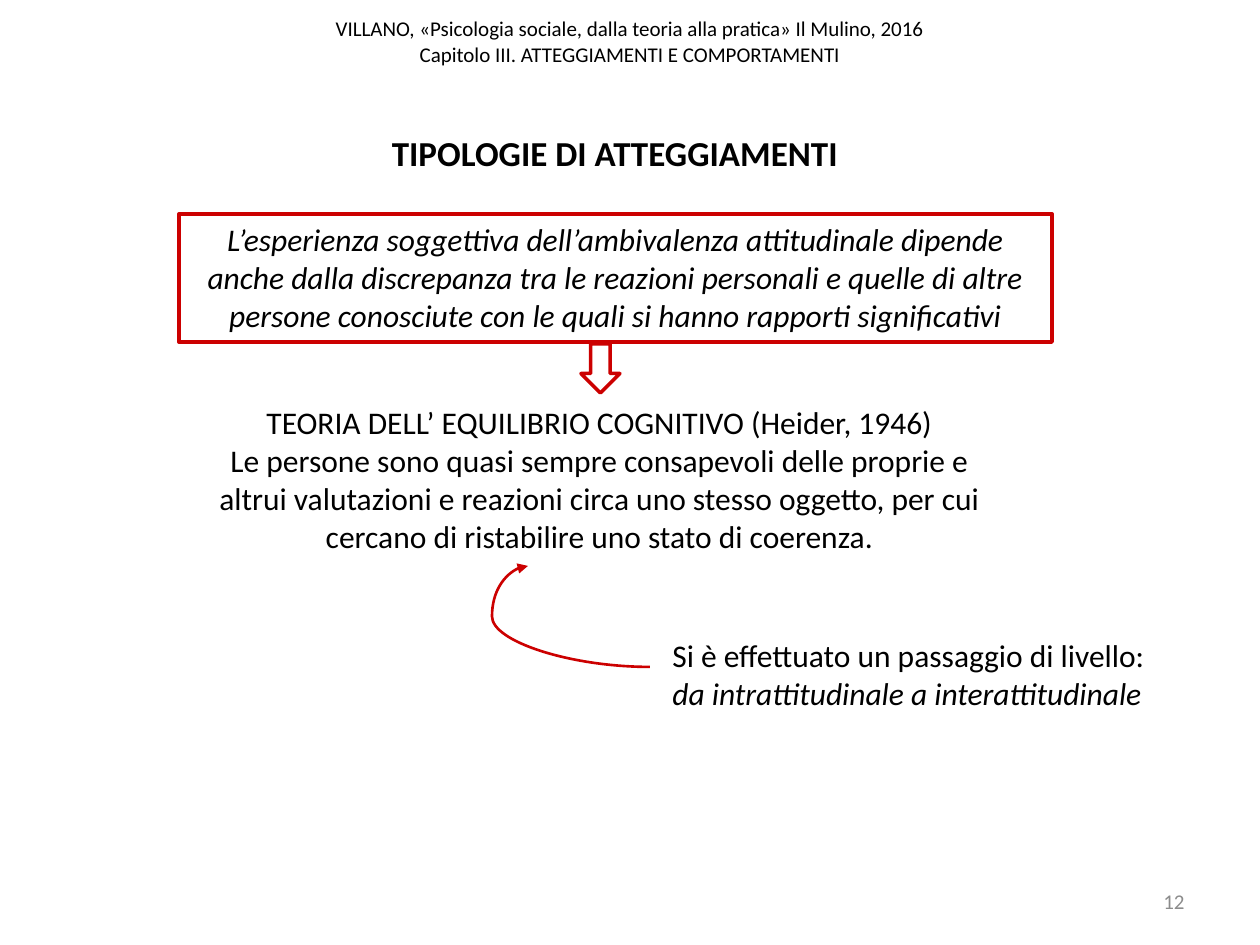
from dataclasses import dataclass

from lxml import etree
from pptx import Presentation
from pptx.dml.color import RGBColor
from pptx.enum import shapes, text
from pptx.oxml import ns
from pptx.util import Emu, Pt

PX = 914400 / 126  # EMU in one px


@dataclass(frozen=True)
class Theme:
    font: str = "Calibri"
    ink: RGBColor = RGBColor(0x00, 0x00, 0x00)
    muted: RGBColor = RGBColor(0x8C, 0x8C, 0x8C)
    accent: RGBColor = RGBColor(0xCC, 0x00, 0x00)
    small: int = 12
    body: int = 18
    title: int = 20


THEME = Theme()
CENTER, LEFT, RIGHT = text.PP_ALIGN.CENTER, text.PP_ALIGN.LEFT, text.PP_ALIGN.RIGHT
TOP, MIDDLE = text.MSO_ANCHOR.TOP, text.MSO_ANCHOR.MIDDLE


def px(*lengths):
    return [Emu(round(length * PX)) for length in lengths]


def write(shape, lines, size=THEME.body, color=THEME.ink, align=CENTER,
          anchor=TOP, bold=False, italics=()):
    """Fill a shape with one paragraph per line; italics lists line indexes."""
    frame = shape.text_frame
    frame.word_wrap = True
    frame.auto_size = text.MSO_AUTO_SIZE.NONE
    frame.vertical_anchor = anchor
    for index, line in enumerate(lines):
        paragraph = frame.paragraphs[0] if index == 0 else frame.add_paragraph()
        paragraph.text = line
        paragraph.alignment = align
        font = paragraph.font
        font.name, font.size, font.bold = THEME.font, Pt(size), bold
        font.italic = index in italics
        font.color.rgb = color


def add_text(slide, box, lines, **style):
    write(slide.shapes.add_textbox(*px(*box)), lines, **style)


def add_outline(slide, preset, box, weight):
    shape = slide.shapes.add_shape(preset, *px(*box))
    shape.shadow.inherit = False
    shape.fill.background()
    shape.line.color.rgb = THEME.accent
    shape.line.width = Pt(weight)
    return shape


def add_curved_arrow(slide, start, end, bend):
    curve = slide.shapes.add_connector(
        shapes.MSO_CONNECTOR.CURVE, *px(*start, *end))
    curve.line.color.rgb = THEME.accent
    curve.line.width = Pt(1.5)
    properties = curve._element.spPr
    etree.SubElement(curve.line._get_or_add_ln(), ns.qn("a:tailEnd"), type="triangle")
    etree.SubElement(properties, ns.qn("a:effectLst"))
    geometry = properties.find(ns.qn("a:prstGeom"))
    guides = geometry.find(ns.qn("a:avLst"))
    if guides is None:
        guides = etree.SubElement(geometry, ns.qn("a:avLst"))
    etree.SubElement(guides, ns.qn("a:gd"), name="adj1",
                     fmla=f"val {round(bend * 100000)}")


def main():
    deck = Presentation()
    deck.slide_width, deck.slide_height = px(1260, 945)
    slide = deck.slides.add_slide(deck.slide_layouts[5])

    # Running header and page number
    add_text(slide, (0, -14, 1260, 110),
             ["VILLANO, «Psicologia sociale, dalla teoria alla pratica» Il Mulino, 2016\v"
              "Capitolo III. ATTEGGIAMENTI E COMPORTAMENTI"],
             size=THEME.small, anchor=MIDDLE)
    add_text(slide, (903, 876, 294, 50), ["12"], size=THEME.small,
             color=THEME.muted, align=RIGHT, anchor=MIDDLE)

    # Title
    title = slide.shapes.title
    title.left, title.top, title.width, title.height = px(362, 125, 506, 55)
    write(title, ["TIPOLOGIE DI ATTEGGIAMENTI"], size=THEME.title, bold=True)

    # Framed premise and the arrow leading to the theory
    premise = add_outline(slide, shapes.MSO_SHAPE.RECTANGLE, (179, 214, 873, 128), 2.25)
    write(premise,
          ["L’esperienza soggettiva dell’ambivalenza attitudinale dipende anche dalla "
           "discrepanza tra le reazioni personali e quelle di altre persone conosciute "
           "con le quali si hanno rapporti significativi"], italics=(0,))
    add_outline(slide, shapes.MSO_SHAPE.DOWN_ARROW, (581, 344, 39, 49), 2)

    # Theory
    add_text(slide, (200, 397, 799, 165),
             ["TEORIA DELL’ EQUILIBRIO COGNITIVO (Heider, 1946)",
              "Le persone sono quasi sempre consapevoli delle proprie e altrui valutazioni "
              "e reazioni circa uno stesso oggetto, per cui cercano di ristabilire uno "
              "stato di coerenza."])

    # Remark pointing back to the theory
    add_curved_arrow(slide, (650, 667), (528, 566), bend=1.295)
    add_text(slide, (660, 630, 518, 89),
             ["Si è effettuato un passaggio di livello:",
              "da intrattitudinale a interattitudinale"], align=LEFT, italics=(1,))

    deck.save("out.pptx")


if __name__ == "__main__":
    main()
